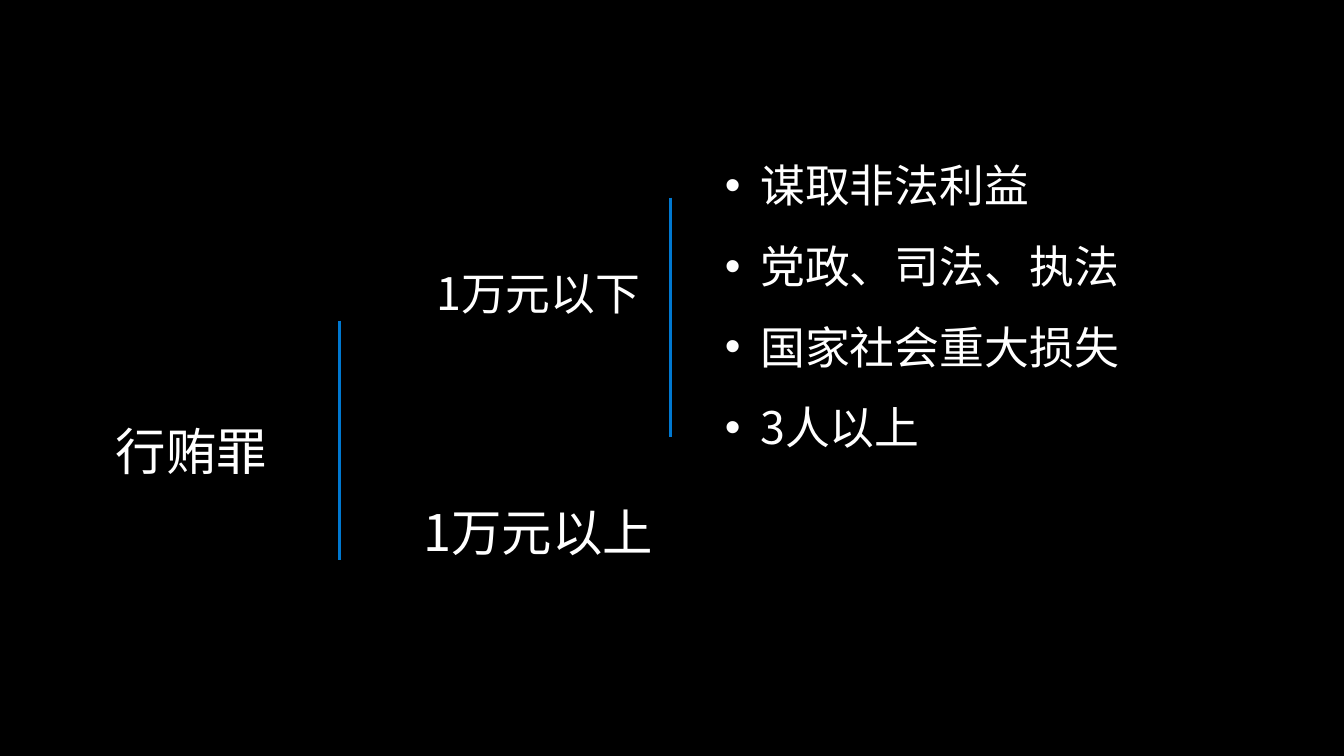
from lxml import etree
from pptx import Presentation
from pptx.dml.color import RGBColor
from pptx.enum import shapes, text
from pptx.oxml.ns import qn
from pptx.util import Inches, Pt

FONT = "Noto Sans CJK SC"
BLACK = RGBColor(0x00, 0x00, 0x00)
WHITE = RGBColor(0xFF, 0xFF, 0xFF)
BLUE = RGBColor(0x00, 0x78, 0xD0)

# wording, (left, top, width, height), size, line spacing
LABELS = [
    ("行贿罪", (0.78, 4.07, 2.24, 0.61), 36, 1.3),
    ("1万元以上", (3.58, 4.88, 3.52, 0.61), 36, 1.3),
    ("1万元以下", (3.58, 2.62, 3.52, 0.56), 32, 1.0),
]
CONDITIONS = ["谋取非法利益", "党政、司法、执法", "国家社会重大损失", "3人以上"]
CONDITIONS_BOX = (7.13, 1.29, 5.42, 3.22)
DIVIDERS = [(3.37, 3.18), (6.65, 1.96)]  # x, top
DIVIDER_LENGTH = 2.38
INSET = Inches(0.06)
INDENT = Inches(0.35)


def add_bullet(p):
    pPr = p._p.get_or_add_pPr()
    pPr.set("marL", str(INDENT))
    pPr.set("indent", str(-INDENT))
    etree.SubElement(pPr, qn("a:buFont")).set("typeface", "Arial")
    etree.SubElement(pPr, qn("a:buChar")).set("char", "•")


def add_text(s, lines, box, size, spacing, bulleted=False):
    tf = s.shapes.add_textbox(*map(Inches, box)).text_frame
    tf.word_wrap = True
    tf.auto_size = text.MSO_AUTO_SIZE.SHAPE_TO_FIT_TEXT
    tf.vertical_anchor = text.MSO_ANCHOR.MIDDLE
    tf.margin_left = tf.margin_right = tf.margin_top = tf.margin_bottom = INSET
    tf.text = "\n".join(lines)
    for p in tf.paragraphs:
        p.line_spacing = spacing
        if bulleted:
            add_bullet(p)
        else:
            p.alignment = text.PP_ALIGN.CENTER
        for r in p.runs:
            r.font.size = Pt(size)
            r.font.name = FONT
            r.font.color.rgb = WHITE
            etree.SubElement(r._r.get_or_add_rPr(), qn("a:ea")).set("typeface", FONT)


def add_divider(s, x, top):
    line = s.shapes.add_connector(
        shapes.MSO_CONNECTOR.STRAIGHT,
        Inches(x), Inches(top), Inches(x), Inches(top + DIVIDER_LENGTH))
    line.line.color.rgb = BLUE
    line.line.width = Pt(2)
    etree.SubElement(line._element.spPr, qn("a:effectLst"))


def main():
    prs = Presentation()
    prs.slide_width, prs.slide_height = Inches(13.33), Inches(7.5)
    s = prs.slides.add_slide(prs.slide_layouts[6])
    s.background.fill.solid()
    s.background.fill.fore_color.rgb = BLACK
    for label, box, size, spacing in LABELS:
        add_text(s, [label], box, size, spacing)
    add_text(s, CONDITIONS, CONDITIONS_BOX, 32, 1.5, bulleted=True)
    for x, top in DIVIDERS:
        add_divider(s, x, top)
    prs.save("out.pptx")


if __name__ == "__main__":
    main()
